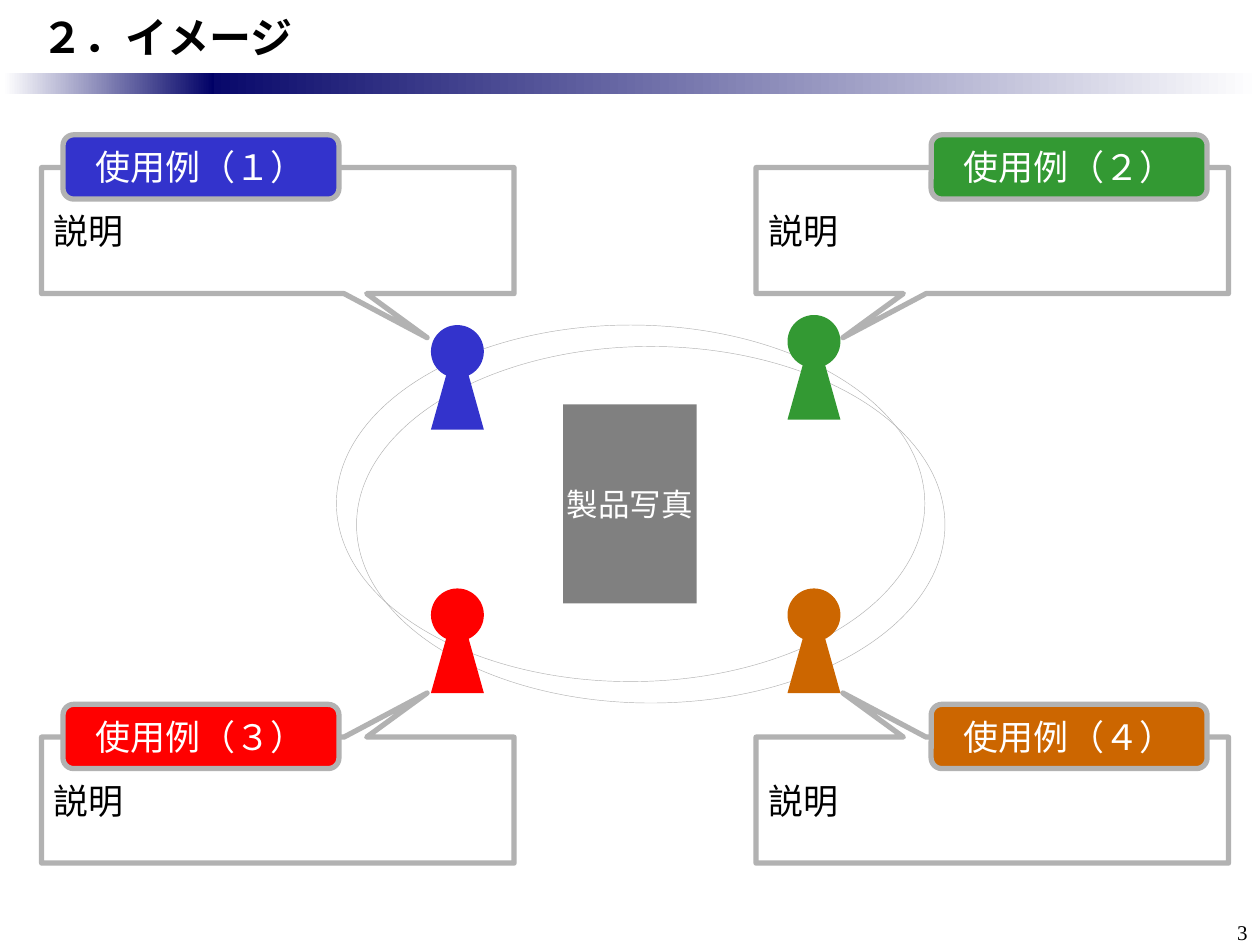
from lxml import etree
from pptx import Presentation
from pptx.dml.color import RGBColor
from pptx.enum.shapes import MSO_SHAPE
from pptx.enum.text import MSO_ANCHOR, PP_ALIGN
from pptx.oxml.ns import qn
from pptx.util import Inches, Pt

CJK = "Noto Sans CJK JP"
SERIF = "Times New Roman"
GRAY = "B2B2B2"


def paint(shape, fill=None, line=None, width=3):
    """Set hex fill and line colours (None for neither) and drop the shadow."""
    shape.shadow.inherit = False
    if fill:
        shape.fill.solid()
        shape.fill.fore_color.rgb = RGBColor.from_string(fill)
    else:
        shape.fill.background()
    if line:
        shape.line.color.rgb = RGBColor.from_string(line)
        shape.line.width = Pt(width)
    else:
        shape.line.fill.background()


def write(shape, text, *, size, font=CJK, color="000000", bold=False,
          align=PP_ALIGN.LEFT, anchor=MSO_ANCHOR.MIDDLE, wrap=True, left=0.1):
    frame = shape.text_frame
    frame.word_wrap = wrap
    frame.vertical_anchor = anchor
    frame.margin_left = Inches(left)
    paragraph = frame.paragraphs[0]
    paragraph.alignment = align
    run = paragraph.add_run()
    run.text = text
    run.font.size = Pt(size)
    run.font.bold = bold
    run.font.color.rgb = RGBColor.from_string(color)
    run.font.name = font
    east_asian = etree.SubElement(run.font._element, qn("a:ea"))
    east_asian.set("typeface", CJK)


prs = Presentation()
prs.slide_width, prs.slide_height = Inches(10), Inches(7.5)
shapes = prs.slides.add_slide(prs.slide_layouts[6]).shapes

# Title, gradient band and page number
for left, width, colors in ((1.42, 8.58, ("000066", "FFFFFF")),
                            (0.03, 1.67, ("FFFFFF", "000066"))):
    band = shapes.add_shape(MSO_SHAPE.RECTANGLE, Inches(left), Inches(0.58),
                            Inches(width), Inches(0.17))
    paint(band)
    band.fill.gradient()
    band.fill.gradient_angle = 0
    for stop, color in zip(band.fill.gradient_stops, colors):
        stop.color.rgb = RGBColor.from_string(color)

title = shapes.add_textbox(0, 0, Inches(10), Inches(0.58))
write(title, "２．イメージ", size=24, bold=True, left=0.33)
page_number = shapes.add_textbox(Inches(9.42), Inches(7.25), Inches(0.58), Inches(0.25))
write(page_number, "3", size=12, font=SERIF, align=PP_ALIGN.RIGHT, anchor=MSO_ANCHOR.TOP)

# Callouts: the top left outline, mirrored for the other corners
OUTLINE = [(4.08, 2.33), (4.08, 1.33), (0.33, 1.33), (0.33, 2.33),
           (2.73, 2.33), (3.39, 2.68), (2.91, 2.33)]
for is_bottom in (True, False):
    for is_right in (True, False):
        corners = [(Inches(10.08 - x if is_right else x),
                    Inches(8.18 - y if is_bottom else y)) for x, y in OUTLINE]
        builder = shapes.build_freeform(*corners[0])
        builder.add_line_segments(corners[1:], close=True)
        paint(builder.convert_to_shape(), "FFFFFF", GRAY)

# Rings around the product
for left, top in ((2.83, 2.75), (2.67, 2.58)):
    ring = shapes.add_shape(MSO_SHAPE.OVAL, Inches(left), Inches(top),
                            Inches(4.67), Inches(2.83))
    paint(ring, line=GRAY, width=0.25)

product = shapes.add_shape(MSO_SHAPE.RECTANGLE, Inches(4.47), Inches(3.21),
                           Inches(1.06), Inches(1.58))
paint(product, "808080")
write(product, "製品写真", size=18, font=SERIF, color="FFFFFF",
      align=PP_ALIGN.CENTER, wrap=False)

# Use cases: box left, box top, label left, person left, person top
USE_CASES = [
    ("使用例（１）", "3333CC", 0.33, 1.33, 0.5, 3.42, 2.58),
    ("使用例（２）", "339933", 6, 1.33, 7.39, 6.25, 2.5),
    ("使用例（３）", "FF0000", 0.33, 5.85, 0.5, 3.42, 4.67),
    ("使用例（４）", "CC6600", 6, 5.85, 7.39, 6.25, 4.67),
]
for name, color, box_left, box_top, label_left, person_left, person_top in USE_CASES:
    body = shapes.add_shape(MSO_SHAPE.ISOSCELES_TRIANGLE, Inches(person_left),
                            Inches(person_top + 0.08), Inches(0.42), Inches(0.75))
    head = shapes.add_shape(MSO_SHAPE.OVAL, Inches(person_left), Inches(person_top),
                            Inches(0.42), Inches(0.42))
    paint(body, color)
    paint(head, color)

    description = shapes.add_textbox(Inches(box_left), Inches(box_top),
                                     Inches(3.75), Inches(1))
    write(description, "説明", size=20)

    label = shapes.add_shape(MSO_SHAPE.ROUNDED_RECTANGLE, Inches(label_left),
                             Inches(box_top - 0.26), Inches(2.19), Inches(0.51))
    paint(label, color, GRAY)
    write(label, name, size=20, font=SERIF, color="FFFFFF", align=PP_ALIGN.CENTER)

prs.save("out.pptx")
